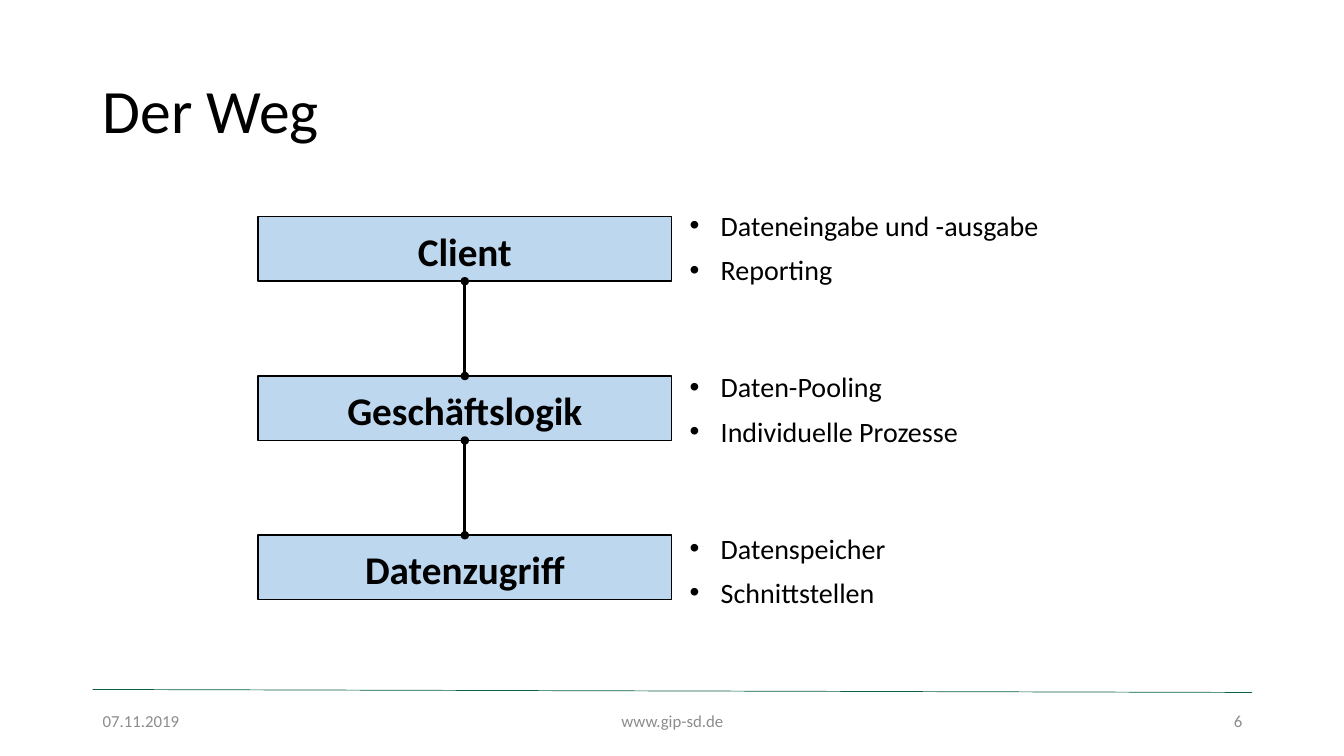
from lxml.etree import SubElement
from pptx import Presentation
from pptx.dml.color import RGBColor
from pptx.enum.shapes import MSO_CONNECTOR, MSO_SHAPE
from pptx.enum.text import MSO_ANCHOR, PP_ALIGN
from pptx.oxml.ns import qn
from pptx.util import Inches, Pt

TITLE = "Der Weg"
LAYERS = [
    ("Client", ["Dateneingabe und -ausgabe", "Reporting"]),
    ("Geschäftslogik", ["Daten-Pooling", "Individuelle Prozesse"]),
    ("Datenzugriff", ["Datenspeicher", "Schnittstellen"]),
]
FOOTER = [  # text, width, alignment
    ("07.11.2019", 3, PP_ALIGN.LEFT),
    ("www.gip-sd.de", 4.5, PP_ALIGN.CENTER),
    ("6", 3, PP_ALIGN.RIGHT),
]

BLACK = RGBColor(0, 0, 0)
GRAY = RGBColor(0x8C, 0x8C, 0x8C)
BLUE = RGBColor(0xBD, 0xD7, 0xEE)
GREEN = RGBColor(0x0A, 0x62, 0x3E)
FONT = "Calibri"

WIDE, HIGH = 13.33, 7.5
EDGE, SPAN = 0.92, 11.5
BOX_X, BOX_Y, BOX_W, BOX_H, BOX_STEP = 2.56, 2.15, 4.1, 0.64, 1.58
NOTE_X, NOTE_Y, NOTE_W, NOTE_H, NOTE_STEP = 6.74, 2.02, 5.68, 0.44, 1.6
INDENT = Inches(0.31)


def write(shape, text, size, color=BLACK, align=PP_ALIGN.LEFT,
          anchor=MSO_ANCHOR.MIDDLE, bold=False):
    frame = shape.text_frame
    frame.word_wrap = True
    frame.vertical_anchor = anchor
    para = frame.paragraphs[0]
    para.alignment = align
    run = para.add_run()
    run.text = text
    font = run.font
    font.name, font.size, font.bold = FONT, Pt(size), bold
    font.color.rgb = color
    return para


def add_text(slide, x, y, w, h, *args, **kwargs):
    box = slide.shapes.add_textbox(*map(Inches, (x, y, w, h)))
    return write(box, *args, **kwargs)


def add_bullet(para):
    props = para._p.get_or_add_pPr()
    props.set("marL", str(INDENT))
    props.set("indent", str(-INDENT))
    SubElement(props, qn("a:buFont")).set("typeface", "Arial")
    SubElement(props, qn("a:buChar")).set("char", "•")


def add_line(slide, ends, color, width, dots=False):
    line = slide.shapes.add_connector(
        MSO_CONNECTOR.STRAIGHT, *map(Inches, ends))
    line.line.color.rgb = color
    line.line.width = Pt(width)
    if dots:
        stroke = line.line._get_or_add_ln()
        for end in ("a:headEnd", "a:tailEnd"):
            SubElement(stroke, qn(end)).set("type", "oval")
    SubElement(line._element.spPr, qn("a:effectLst"))
    return line


def add_box(slide, name, y):
    box = slide.shapes.add_shape(
        MSO_SHAPE.RECTANGLE, *map(Inches, (BOX_X, y, BOX_W, BOX_H)))
    box.shadow.inherit = False
    box.fill.solid()
    box.fill.fore_color.rgb = BLUE
    box.line.color.rgb = BLACK
    box.line.width = Pt(1)
    para = write(box, name, 28, align=PP_ALIGN.CENTER, bold=True)
    para.line_spacing = 1.06
    para.space_after = Pt(8)
    return box


def main():
    deck = Presentation()
    deck.slide_width, deck.slide_height = Inches(WIDE), Inches(HIGH)
    slide = deck.slides.add_slide(deck.slide_layouts[5])

    add_line(slide, (EDGE, 6.84, EDGE + SPAN, 6.87), GREEN, 0.5)
    title = slide.shapes.title
    title.left, title.top = Inches(EDGE), Inches(0.4)
    title.width, title.height = Inches(SPAN), Inches(1.45)
    write(title, TITLE, 44).line_spacing = 0.9

    x = EDGE
    for text, width, align in FOOTER:
        add_text(slide, x, 6.95, width, 0.4, text, 12, GRAY, align)
        x += width + 0.5

    boxes = []
    for i, (name, notes) in enumerate(LAYERS):
        boxes.append(add_box(slide, name, BOX_Y + i * BOX_STEP))
        for j, note in enumerate(notes):
            y = NOTE_Y + i * NOTE_STEP + j * NOTE_H
            add_bullet(add_text(slide, NOTE_X, y, NOTE_W, NOTE_H, note, 20,
                                anchor=MSO_ANCHOR.TOP))

    for upper, lower in zip(boxes, boxes[1:]):
        link = add_line(slide, (0, 0, 0, 0), BLACK, 2, dots=True)
        link.begin_connect(upper, 2)
        link.end_connect(lower, 0)

    deck.save("out.pptx")


if __name__ == "__main__":
    main()
